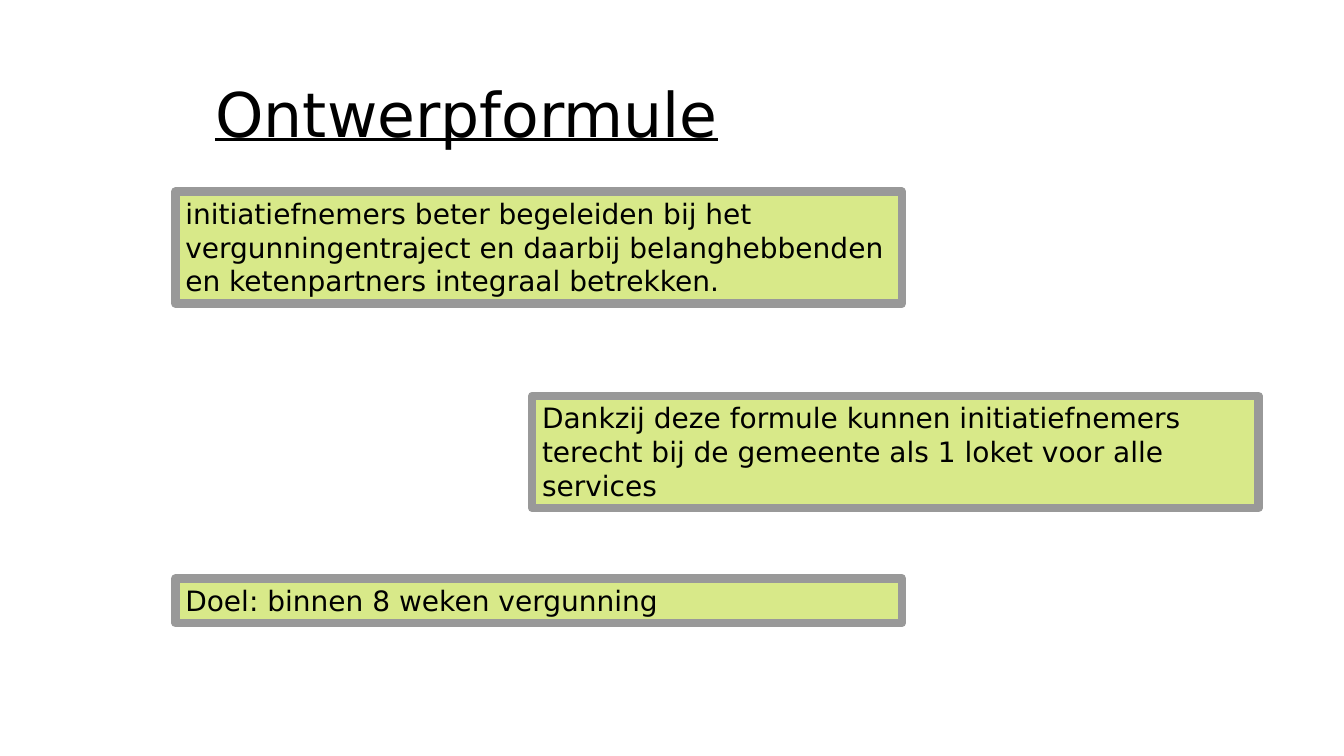
from lxml import etree
from pptx import Presentation
from pptx.dml.color import RGBColor
from pptx.enum.shapes import MSO_SHAPE
from pptx.enum.text import MSO_ANCHOR, MSO_AUTO_SIZE, PP_ALIGN
from pptx.oxml.ns import qn
from pptx.util import Cm, Pt

RECTANGLE = MSO_SHAPE.RECTANGLE
TOP = MSO_ANCHOR.TOP
LEFT = PP_ALIGN.LEFT
GROW = MSO_AUTO_SIZE.SHAPE_TO_FIT_TEXT
BLACK = RGBColor(0x00, 0x00, 0x00)
LIME = RGBColor(0xD8, 0xE9, 0x89)
GREY = RGBColor(0x99, 0x99, 0x99)

LEFT_COLUMN = 4.42
RIGHT_COLUMN = 13.41
PANEL_WIDTH = 18.31
PANELS = [
    (LEFT_COLUMN, 4.83, 2.82,
     "initiatiefnemers beter begeleiden bij het vergunningentraject "
     "en daarbij belanghebbenden en ketenpartners integraal betrekken."),
    (LEFT_COLUMN, 14.58, 1.12, "Doel: binnen 8 weken vergunning"),
    (RIGHT_COLUMN, 9.98, 2.82,
     "Dankzij deze formule kunnen initiatiefnemers terecht bij de "
     "gemeente als 1 loket voor alle services"),
]


class SlideBuilder:
    """Adds the title and framed text panels to a slide in one style."""

    font_format = {"name": "DejaVu Sans", "size": Pt(20)}
    frame_format = {"word_wrap": True, "auto_size": GROW, "vertical_anchor": TOP}

    def __init__(self, slide):
        self.slide = slide

    def fill_text(self, shape, text, **font_changes):
        frame = shape.text_frame
        for name, value in self.frame_format.items():
            setattr(frame, name, value)
        paragraph = frame.paragraphs[0]
        paragraph.alignment = LEFT
        run = paragraph.add_run()
        run.text = text
        for name, value in {**self.font_format, **font_changes}.items():
            setattr(run.font, name, value)
        run.font.color.rgb = BLACK

    def title(self, left, top, width, height, text):
        shape = self.slide.shapes.add_textbox(Cm(left), Cm(top), Cm(width), Cm(height))
        self.fill_text(shape, text, size=Pt(44), underline=True)

    def panel(self, left, top, height, text):
        shape = self.slide.shapes.add_shape(
            RECTANGLE, Cm(left), Cm(top), Cm(PANEL_WIDTH), Cm(height))
        shape.shadow.inherit = False
        shape.fill.solid()
        shape.fill.fore_color.rgb = LIME
        shape.line.color.rgb = GREY
        shape.line.width = Pt(6)
        outline = shape.element.spPr.find(qn("a:ln"))
        etree.SubElement(outline, qn("a:round"))
        self.fill_text(shape, text)


def main():
    presentation = Presentation()
    presentation.slide_width = Cm(33.87)
    presentation.slide_height = Cm(19.05)
    blank_layout = presentation.slide_layouts[6]
    builder = SlideBuilder(presentation.slides.add_slide(blank_layout))
    builder.title(5.18, 1.78, 25.04, 2.13, "Ontwerpformule")
    for panel in PANELS:
        builder.panel(*panel)
    presentation.save("out.pptx")


if __name__ == "__main__":
    main()
